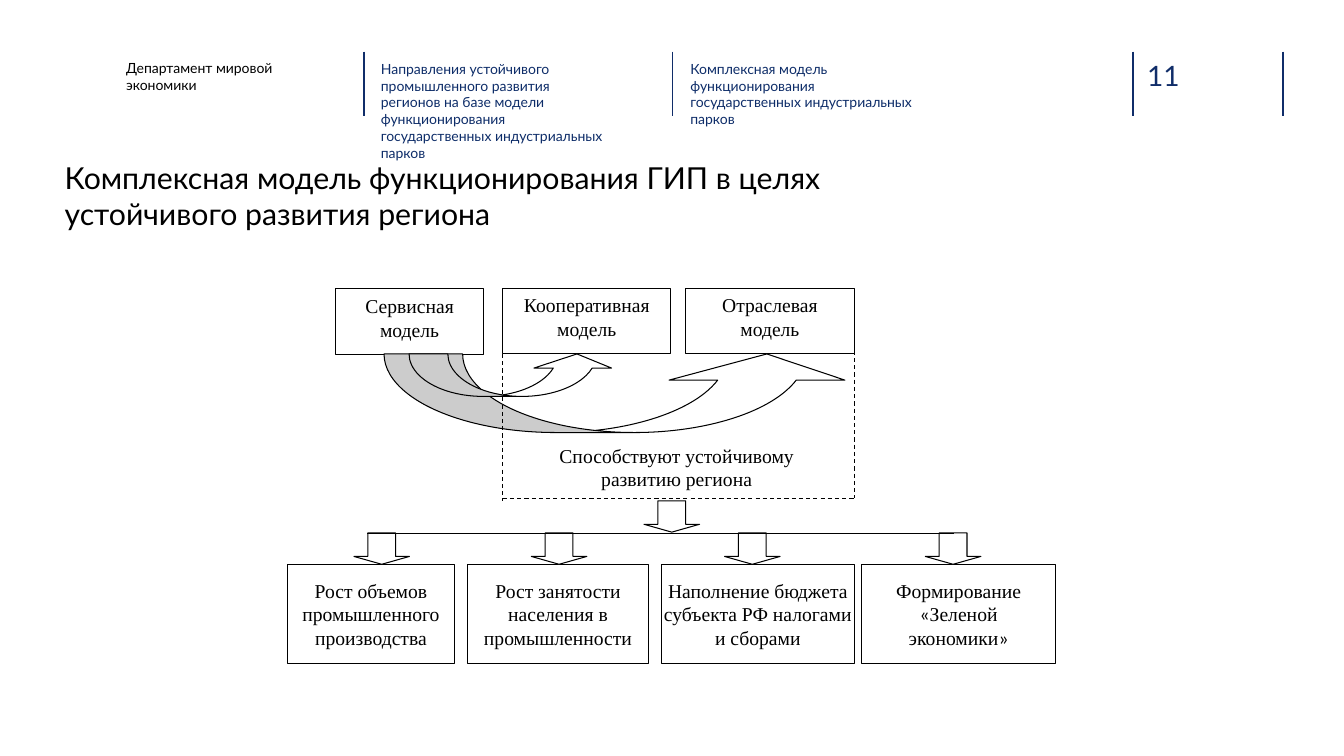
from itertools import groupby
from typing import NamedTuple

from lxml.etree import SubElement
from pptx import Presentation
from pptx.dml.color import RGBColor
from pptx.enum.dml import MSO_LINE
from pptx.enum.shapes import MSO_CONNECTOR, MSO_SHAPE
from pptx.enum.text import MSO_ANCHOR, MSO_AUTO_SIZE, PP_ALIGN
from pptx.oxml.ns import qn
from pptx.util import Cm, Pt

BLACK, WHITE, NAVY, BLUE = "000000", "FFFFFF", "102D69", "0E2D69"
SANS, SERIF, QUOTE = "Lato", "Times New Roman", "Calibri"


class Area(NamedTuple):
    left: float
    top: float
    width: float
    height: float


class Style(NamedTuple):
    font: str
    size: float
    color: str
    align: PP_ALIGN = PP_ALIGN.LEFT
    anchor: MSO_ANCHOR = MSO_ANCHOR.TOP
    pad: tuple[float, float] = (0, 0)


class Label(NamedTuple):
    area: Area
    text: str
    style: Style


class Rule(NamedTuple):
    start: tuple[float, float]
    end: tuple[float, float]
    color: str = BLACK
    width: float = 0.75
    dash: bool = False


class Curve(NamedTuple):
    area: Area
    shaft: float
    head: float


def paint(code: str) -> RGBColor:
    return RGBColor.from_string(code)


def write(shape, text: str, style: Style) -> None:
    frame = shape.text_frame
    frame.text = text
    frame.word_wrap = True
    frame.auto_size = MSO_AUTO_SIZE.NONE
    frame.vertical_anchor = style.anchor
    frame.margin_left = frame.margin_right = Cm(style.pad[0])
    frame.margin_top = frame.margin_bottom = Cm(style.pad[1])
    for para in frame.paragraphs:
        para.alignment = style.align
        parts = groupby(para.text, key=lambda sign: sign in "«»")
        pieces = [(quoted, "".join(signs)) for quoted, signs in parts]
        para.clear()
        for quoted, piece in pieces:
            run = para.add_run()
            run.text = piece
            run.font.name = QUOTE if quoted else style.font
            run.font.size = Pt(style.size)
            run.font.color.rgb = paint(style.color)


def draw(slide, kind: MSO_SHAPE, area: Area, line: bool = True):
    shape = slide.shapes.add_shape(kind, *map(Cm, area))
    shape.shadow.inherit = False
    shape.fill.solid()
    shape.fill.fore_color.rgb = paint(WHITE)
    if line:
        shape.line.color.rgb = paint(BLACK)
        shape.line.width = Pt(0.75)
    else:
        shape.line.fill.background()
    return shape


def box(slide, label: Label, line: bool = True) -> None:
    write(draw(slide, MSO_SHAPE.RECTANGLE, label.area, line), label.text, label.style)


def note(slide, label: Label) -> None:
    write(slide.shapes.add_textbox(*map(Cm, label.area)), label.text, label.style)


def join(slide, rule: Rule) -> None:
    line = slide.shapes.add_connector(
        MSO_CONNECTOR.STRAIGHT, *map(Cm, rule.start + rule.end))
    line.line.color.rgb = paint(rule.color)
    line.line.width = Pt(rule.width)
    if rule.dash:
        line.line.dash_style = MSO_LINE.DASH
    SubElement(line._element.spPr, qn("a:effectLst"))


def bend(slide, curve: Curve) -> None:
    shape = draw(slide, MSO_SHAPE.CURVED_UP_ARROW, curve.area)
    for index, value in enumerate((curve.shaft, curve.head, 0.333)):
        shape.adjustments[index] = value


def drop(slide, left: float, top: float) -> None:
    shape = draw(slide, MSO_SHAPE.DOWN_ARROW, Area(left, top, 1.4, 0.79))
    shape.adjustments[0] = 0.5
    shape.adjustments[1] = 0.25


HEAD = Style(SANS, 10, BLUE)
MODEL = Style(SERIF, 14, BLACK, PP_ALIGN.CENTER, pad=(0.25, 0.13))
CAPTION = MODEL._replace(pad=(0.05, 0.03))
RESULT = CAPTION._replace(anchor=MSO_ANCHOR.MIDDLE)

HEADS = [
    Label(Area(3.18, 1.5, 5.28, 1.14), "Департамент мировой\nэкономики",
          HEAD._replace(color=BLACK)),
    Label(Area(9.6, 1.52, 5.74, 1.14),
          "Направления устойчивого промышленного развития регионов на базе модели "
          "функционирования государственных индустриальных парков", HEAD),
    Label(Area(17.4, 1.52, 5.74, 1.14),
          "Комплексная модель функционирования государственных индустриальных парков",
          HEAD),
    Label(Area(28.91, 1.47, 1.85, 0.86), "11", Style(SANS, 20, NAVY)),
]
MODELS = [
    Label(Area(8.46, 7.28, 3.73, 1.65), "Сервисная модель", MODEL),
    Label(Area(12.67, 7.26, 4.24, 1.65), "Кооперативная модель", MODEL),
    Label(Area(17.27, 7.26, 4.27, 1.65), "Отраслевая модель", MODEL),
]
CURVES = [
    Curve(Area(9.68, 8.92, 11.86, 1.98), 1.119, 2.237),
    Curve(Area(10.31, 8.92, 5.21, 1.07), 0.914, 1.829),
]
FRAME = [
    Rule((12.67, 8.92), (12.67, 12.62), dash=True),
    Rule((21.54, 8.84), (21.54, 12.55), dash=True),
    Rule((12.67, 12.55), (21.54, 12.55), dash=True),
]
RESULTS = [
    (7.24, 4.22, "Рост объемов промышленного производства"),
    (11.79, 4.55, "Рост занятости населения в промышленности"),
    (16.66, 4.88, "Наполнение бюджета субъекта РФ налогами и сборами"),
    (21.72, 4.88, "Формирование «Зеленой\nэкономики»"),
]


def main() -> None:
    deck = Presentation()
    deck.slide_width, deck.slide_height = Cm(33.87), Cm(19.05)
    slide = deck.slides.add_slide(deck.slide_layouts[5])

    # Header strip
    for left in (9.17, 16.94, 28.55, 32.33):
        join(slide, Rule((left, 1.3), (left, 2.92), NAVY, 1))
    for head in HEADS:
        note(slide, head)

    # Title
    title = slide.shapes.title
    title.left, title.top, title.width, title.height = map(
        Cm, Area(1.63, 4.01, 22.2, 2.16))
    write(title, "Комплексная модель функционирования ГИП в целях "
          "устойчивого развития региона", Style(SANS, 21.6, BLACK))

    # Models and the arrows between them
    for model in MODELS:
        box(slide, model)
    for curve in CURVES:
        bend(slide, curve)

    # Shared effect in a dashed frame
    box(slide, Label(Area(13.03, 11.15, 8.05, 1.4),
                     "Способствуют устойчивому развитию региона", CAPTION), False)
    for rule in FRAME:
        join(slide, rule)

    # Results with their arrows
    for left, width, text in RESULTS:
        box(slide, Label(Area(left, 14.22, width, 2.51), text, RESULT))
    for left in (8.92, 13.39, 18.26, 23.32):
        drop(slide, left, 13.43)
    join(slide, Rule((9.25, 13.44), (24.03, 13.44)))
    drop(slide, 16.23, 12.62)

    deck.save("out.pptx")


if __name__ == "__main__":
    main()
